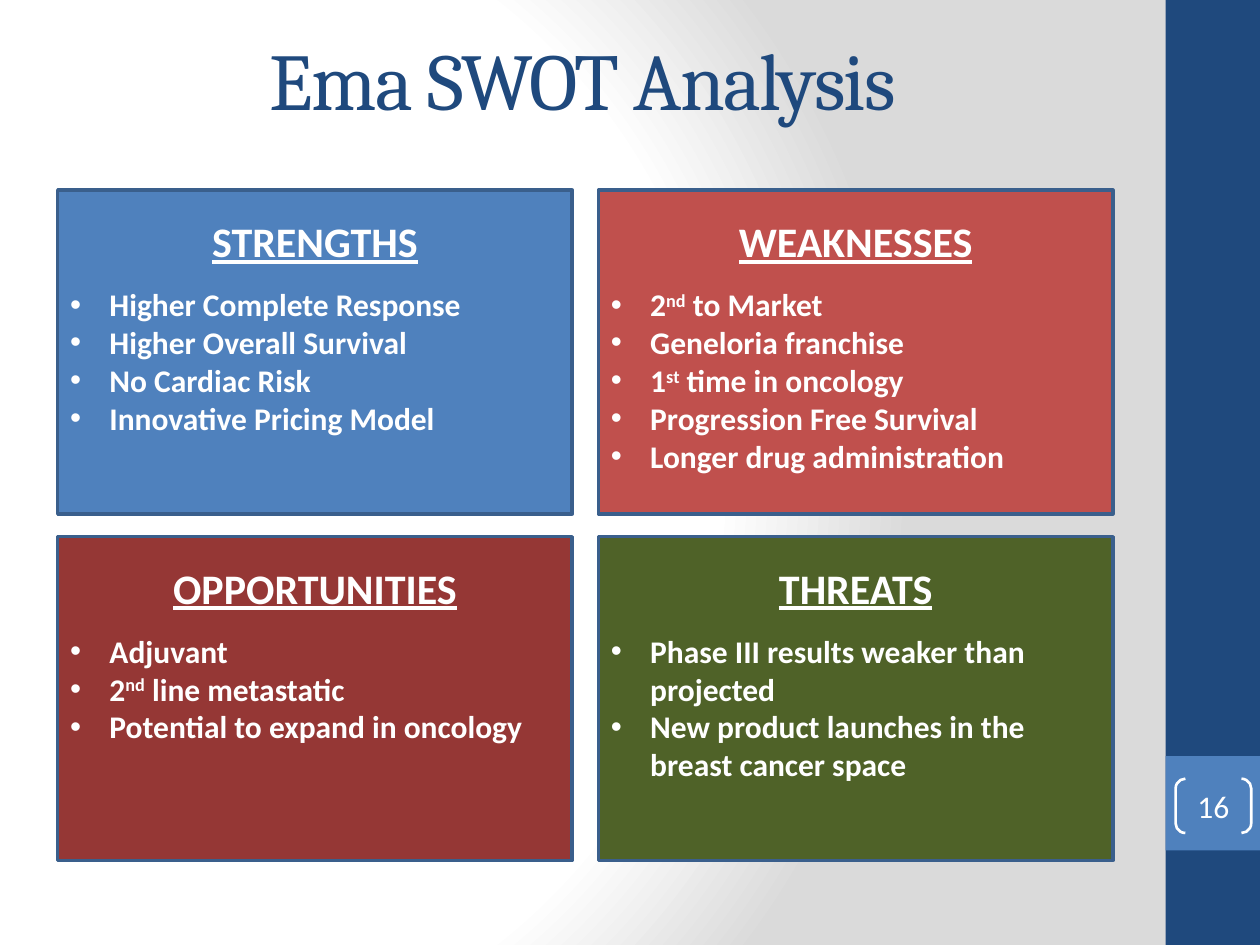
"""Build the Ema SWOT analysis slide."""
from dataclasses import dataclass

from lxml import etree
from pptx import Presentation
from pptx.dml.color import RGBColor
from pptx.enum.shapes import MSO_SHAPE
from pptx.enum.text import MSO_ANCHOR, PP_ALIGN
from pptx.oxml import parse_xml
from pptx.oxml.ns import nsdecls, qn
from pptx.shapes.autoshape import Shape
from pptx.slide import Slide
from pptx.text.text import _Paragraph, _Run
from pptx.util import Pt

RECTANGLE = MSO_SHAPE.RECTANGLE
BRACKETS = MSO_SHAPE.DOUBLE_BRACKET
CENTER = PP_ALIGN.CENTER
TOP = MSO_ANCHOR.TOP
MIDDLE = MSO_ANCHOR.MIDDLE

COLORS = {
    "white": "FFFFFF",
    "gray": "DADADA",
    "navy": "1F497D",
    "blue": "4F81BD",
    "red": "C0504D",
    "maroon": "953735",
    "green": "4F6228",
    "border": "3A5F8C",
}
GRID_LEFT, GRID_TOP = 33, 108.7
COLUMN_PITCH, ROW_PITCH = 309, 198
PANEL_WIDTH, PANEL_HEIGHT = 294, 185
SUPERSCRIPT_MARK = "^"


@dataclass
class Panel:
    heading: str
    color: str
    column: int
    row: int
    bullets: list[str]


PANELS = [
    Panel("STRENGTHS", "blue", 0, 0, [
        "Higher Complete Response", "Higher Overall Survival",
        "No Cardiac Risk", "Innovative Pricing Model"]),
    Panel("OPPORTUNITIES", "maroon", 0, 1, [
        "Adjuvant", "2^nd^ line metastatic", "Potential to expand in oncology"]),
    Panel("THREATS", "green", 1, 1, [
        "Phase III results weaker than projected",
        "New product launches in the breast cancer space"]),
    Panel("WEAKNESSES", "red", 1, 0, [
        "2^nd^ to Market", "Geneloria franchise", "1^st^ time in oncology",
        "Progression Free Survival", "Longer drug administration"]),
]


def rgb(color: str) -> RGBColor:
    return RGBColor.from_string(COLORS[color])


def set_background(slide: Slide) -> None:
    slide.background.fill.solid()
    properties = slide.element.find(".//" + qn("p:bgPr"))
    stops = "".join(
        f'<a:gs pos="{position}"><a:srgbClr val="{COLORS[color]}"/></a:gs>'
        for position, color in ((0, "white"), (75000, "white"), (100000, "gray")))
    gradient = parse_xml(
        f'<a:gradFill {nsdecls("a")} rotWithShape="1"><a:gsLst>{stops}</a:gsLst>'
        '<a:path path="circle"><a:fillToRect l="20000" t="50000" r="100000" b="50000"/>'
        '</a:path></a:gradFill>')
    properties.replace(properties[0], gradient)


def add_rectangle(slide: Slide, left: float, top: float, width: float,
                  height: float, color: str) -> Shape:
    shape = slide.shapes.add_shape(RECTANGLE, Pt(left), Pt(top), Pt(width), Pt(height))
    shape.shadow.inherit = False
    shape.fill.solid()
    shape.fill.fore_color.rgb = rgb(color)
    shape.line.fill.background()
    return shape


def add_run(paragraph: _Paragraph, text: str, size: float, color: str = "white",
            font: str = "Calibri", bold: bool = False) -> _Run:
    run = paragraph.add_run()
    run.text = text
    run.font.name = font
    run.font.size = Pt(size)
    run.font.bold = bold
    run.font.color.rgb = rgb(color)
    return run


def add_bullet(paragraph: _Paragraph, text: str) -> None:
    paragraph.alignment = PP_ALIGN.LEFT
    properties = paragraph._p.get_or_add_pPr()
    properties.set("marL", str(Pt(22.5)))
    properties.set("indent", str(Pt(-22.5)))
    etree.SubElement(properties, qn("a:buFont"), typeface="Arial")
    etree.SubElement(properties, qn("a:buChar"), char="•")
    for index, part in enumerate(text.split(SUPERSCRIPT_MARK)):
        run = add_run(paragraph, part, 18, bold=True)
        if index % 2:
            run._r.get_or_add_rPr().set("baseline", "30000")


def add_panel(slide: Slide, panel: Panel) -> None:
    shape = add_rectangle(slide, GRID_LEFT + panel.column * COLUMN_PITCH,
                          GRID_TOP + panel.row * ROW_PITCH,
                          PANEL_WIDTH, PANEL_HEIGHT, panel.color)
    shape.line.color.rgb = rgb("border")
    shape.line.width = Pt(2)
    frame = shape.text_frame
    frame.word_wrap = True
    frame.vertical_anchor = TOP
    frame.margin_top = Pt(14.6)
    heading = frame.paragraphs[0]
    heading.alignment = CENTER
    heading.space_after = Pt(11)
    add_run(heading, panel.heading, 24, bold=True).font.underline = True
    for bullet in panel.bullets:
        add_bullet(frame.add_paragraph(), bullet)


def add_page_number(slide: Slide) -> None:
    shape = slide.shapes.add_shape(BRACKETS, Pt(671.8), Pt(445), Pt(43.2), Pt(31))
    shape.shadow.inherit = False
    shape.adjustments[0] = 0.18
    shape.fill.background()
    shape.line.color.rgb = rgb("white")
    shape.line.width = Pt(1.5)
    frame = shape.text_frame
    frame.margin_left = frame.margin_right = frame.margin_top = frame.margin_bottom = Pt(0)
    frame.vertical_anchor = MIDDLE
    frame.paragraphs[0].alignment = CENTER
    add_run(frame.paragraphs[0], "16", 18)


def add_title(slide: Slide) -> None:
    frame = slide.shapes.add_textbox(Pt(0), Pt(0), Pt(666), Pt(90)).text_frame
    frame.word_wrap = True
    frame.vertical_anchor = MIDDLE
    frame.paragraphs[0].alignment = CENTER
    run = add_run(frame.paragraphs[0], "Ema SWOT Analysis", 46, "navy", "Cambria")
    run._r.get_or_add_rPr().set("spc", "-100")


def main() -> None:
    presentation = Presentation()
    presentation.slide_width, presentation.slide_height = Pt(720), Pt(540)
    slide = presentation.slides.add_slide(presentation.slide_layouts[6])
    set_background(slide)
    add_rectangle(slide, 666, 0, 54, 540, "navy")
    add_rectangle(slide, 666, 432, 54, 54, "blue")
    add_page_number(slide)
    for panel in PANELS:
        add_panel(slide, panel)
    add_title(slide)
    presentation.save("out.pptx")


if __name__ == "__main__":
    main()
